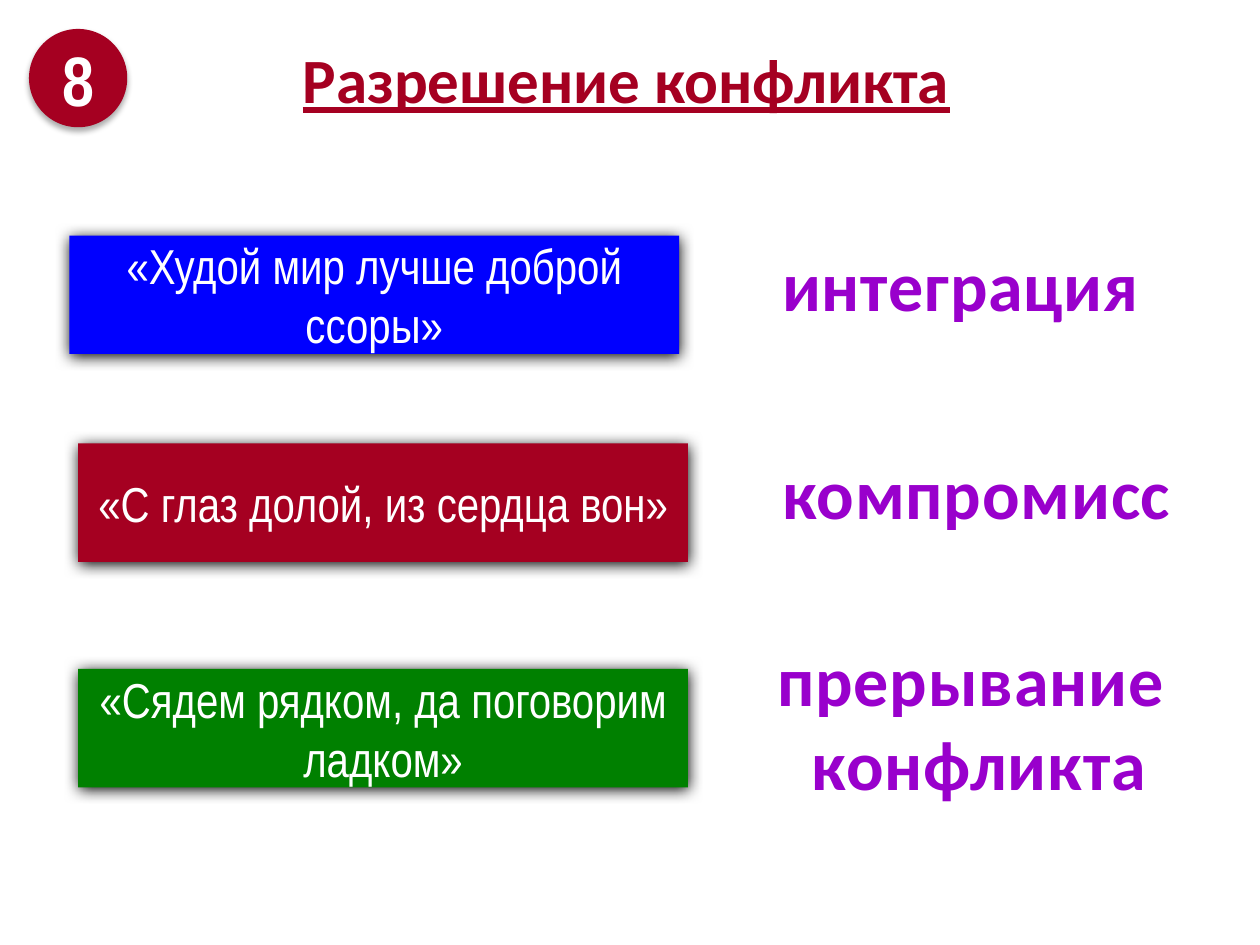
import pptx
import pptx.util
import pptx.dml.color
import pptx.enum.shapes
import pptx.enum.text
import pptx.oxml.ns
import lxml.etree

Inches = pptx.util.Inches
Pt = pptx.util.Pt
SHAPES = pptx.enum.shapes.MSO_SHAPE
ANCHOR = pptx.enum.text.MSO_ANCHOR
AUTO_SIZE = pptx.enum.text.MSO_AUTO_SIZE

COLORS = {
    "crimson": "A50021",
    "blue": "0000FF",
    "green": "008000",
    "purple": "9900CC",
    "white": "FFFFFF",
    "black": "000000",
}


class ConflictSlide:
    heading_font = "Calibri"
    body_font = "Arial Narrow"

    def __init__(self, presentation):
        self.slide = presentation.slides.add_slide(presentation.slide_layouts[6])

    def color(self, name):
        return pptx.dml.color.RGBColor.from_string(COLORS[name])

    def add_lines(self, frame, lines, font, size, color, bold=False, underline=None, spacing=None):
        for index, line in enumerate(lines):
            paragraph = frame.paragraphs[0] if index == 0 else frame.add_paragraph()
            paragraph.alignment = pptx.enum.text.PP_ALIGN.CENTER
            run = paragraph.add_run()
            run.text = line
            run.font.name = font
            run.font.size = Pt(size)
            run.font.bold = bold
            run.font.underline = underline
            run.font.color.rgb = self.color(color)
            if spacing:
                run._r.get_or_add_rPr().set("spc", str(round(spacing * 100)))

    def shadow(self, shape, opacity, blur, distance):
        qn = pptx.oxml.ns.qn
        shape.shadow.inherit = False
        effects = shape._element.spPr.find(qn("a:effectLst"))
        outer = lxml.etree.SubElement(
            effects, qn("a:outerShdw"), blurRad=str(Pt(blur)), dist=str(Pt(distance)),
            dir="5400000", algn="ctr", rotWithShape="0")
        tint = lxml.etree.SubElement(outer, qn("a:srgbClr"), val=COLORS["black"])
        lxml.etree.SubElement(tint, qn("a:alpha"), val=str(opacity * 1000))

    def text_box(self, left, top, width, height):
        return self.slide.shapes.add_textbox(
            Inches(left), Inches(top), Inches(width), Inches(height)).text_frame

    def filled(self, kind, left, top, width, height, fill):
        shape = self.slide.shapes.add_shape(
            kind, Inches(left), Inches(top), Inches(width), Inches(height))
        shape.fill.solid()
        shape.fill.fore_color.rgb = self.color(fill)
        shape.line.fill.background()
        shape.text_frame.word_wrap = True
        shape.text_frame.vertical_anchor = ANCHOR.MIDDLE
        return shape

    def title(self, text):
        frame = self.text_box(0.47, 0, 9, 1.25)
        frame.word_wrap = True
        frame.vertical_anchor = ANCHOR.MIDDLE
        self.add_lines(frame, [text], self.heading_font, 36, "crimson", bold=True, underline=True)

    def proverb(self, text, left, top, fill):
        card = self.filled(SHAPES.RECTANGLE, left, top, 4.84, 0.94, fill)
        self.shadow(card, 100, 8.5, 1)
        self.add_lines(card.text_frame, [text], self.body_font, 28, "white")

    def outcome(self, lines, left, top, width, height):
        frame = self.text_box(left, top, width, height)
        frame.word_wrap = False
        frame.auto_size = AUTO_SIZE.SHAPE_TO_FIT_TEXT
        self.add_lines(frame, lines, self.heading_font, 40, "purple", bold=True, spacing=0.5)

    def badge(self, number):
        circle = self.filled(SHAPES.OVAL, 0.23, 0.23, 0.78, 0.78, "crimson")
        self.shadow(circle, 32, 3.5, 2.2)
        self.add_lines(circle.text_frame, [number], self.body_font, 40, "white", bold=True)


def main():
    presentation = pptx.Presentation()
    presentation.slide_width = Inches(10)
    presentation.slide_height = Inches(7.5)

    page = ConflictSlide(presentation)
    page.title("Разрешение конфликта")

    proverbs = [
        ("«Худой мир лучше доброй ссоры»", 0.55, 1.87, "blue"),
        ("«С глаз долой, из сердца вон»", 0.62, 3.52, "crimson"),
        ("«Сядем рядком, да поговорим ладком»", 0.62, 5.31, "green"),
    ]
    for proverb in proverbs:
        page.proverb(*proverb)

    outcomes = [
        (["компромисс"], 6.09, 3.52, 3.32, 0.77),
        (["интеграция"], 6.09, 1.87, 3.07, 0.77),
        (["прерывание ", "конфликта"], 6.02, 5, 3.5, 1.45),
    ]
    for outcome in outcomes:
        page.outcome(*outcome)

    page.badge("8")
    presentation.save("out.pptx")


if __name__ == "__main__":
    main()
